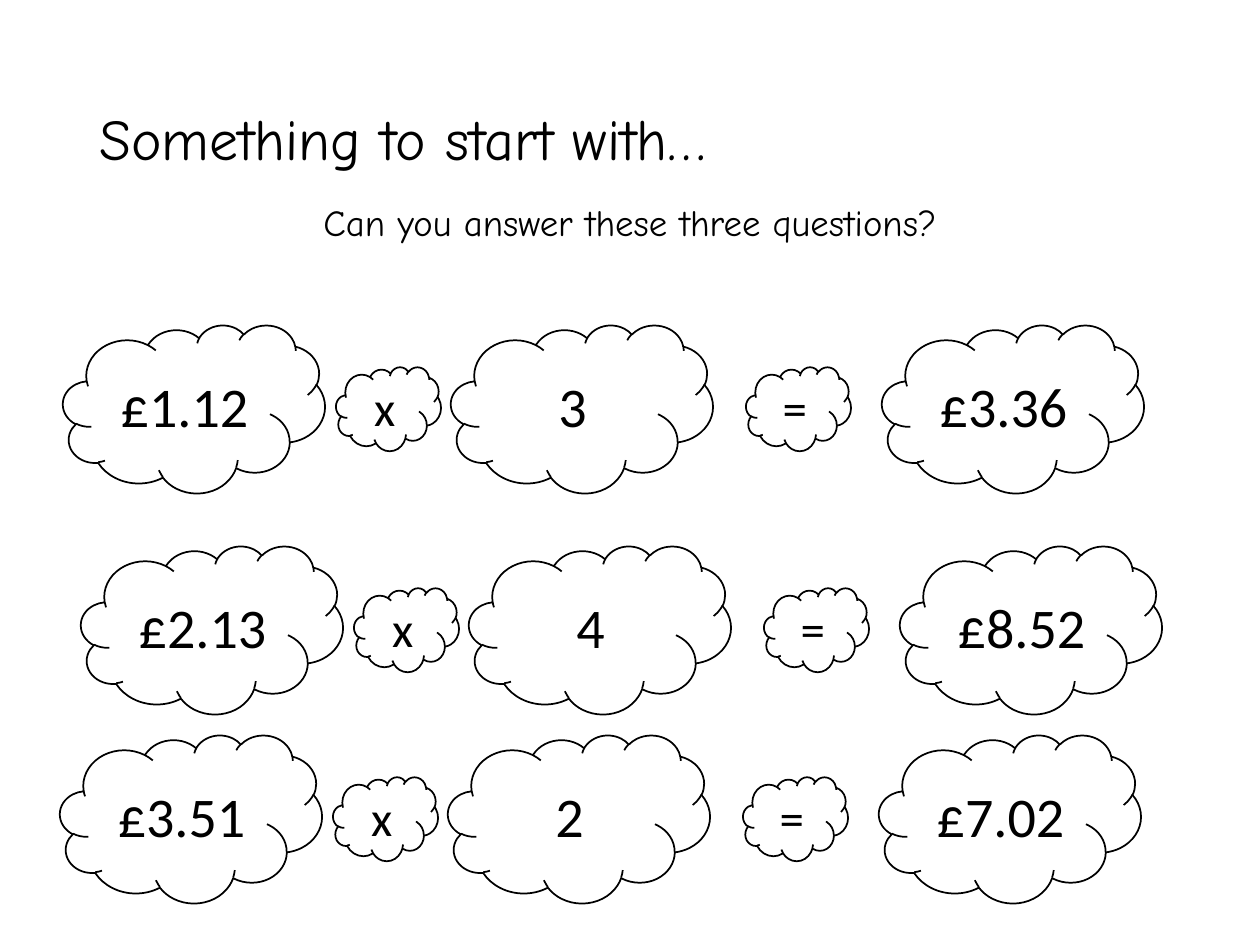
from pptx import Presentation
from pptx import util as u
from pptx.dml.color import RGBColor
from pptx.enum import shapes, text

PX = 914400 // 126
INK = {"text": "000000", "fill": "FFFFFF", "line": "000000"}
BIG, SMALL = (262, 168, 32), (105, 84, 28)  # width, height, font size
SLOTS = [(0, BIG), (273, SMALL), (388, BIG), (683, SMALL), (819, BIG)]
SUMS = [
    (63, 325, ["£1.12", "x", "3", "=", "£3.36"]),
    (81, 546, ["£2.13", "x", "4", "=", "£8.52"]),
    (60, 735, ["£3.51", "x", "2", "=", "£7.02"]),
]


def color(name):
    return RGBColor.from_string(INK[name])


def px(*nums):
    return [u.Emu(n * PX) for n in nums]


def write(shape, words, font, size, align, anchor):
    frame = shape.text_frame
    frame.word_wrap = True
    frame.vertical_anchor = anchor
    para = frame.paragraphs[0]
    para.text = words
    para.alignment = align
    para.font.name = font
    para.font.size = u.Pt(size)
    para.font.color.rgb = color("text")
    return para


def label(slide, box, words, size, align, anchor):
    shape = slide.shapes.add_textbox(*px(*box))
    para = write(shape, words, "Comic Neue", size, align, anchor)
    para.line_spacing = 0.9


def cloud(slide, box, words, size):
    shape = slide.shapes.add_shape(shapes.MSO_SHAPE.CLOUD, *px(*box))
    shape.shadow.inherit = False
    shape.fill.solid()
    shape.fill.fore_color.rgb = color("fill")
    shape.line.color.rgb = color("line")
    shape.line.width = u.Pt(1)
    write(shape, words, "Calibri", size,
          text.PP_ALIGN.CENTER, text.MSO_ANCHOR.MIDDLE)


def sum_row(slide, left, top, parts):
    """Draw one sum as clouds centred on a shared line."""
    for (shift, (wide, high, size)), words in zip(SLOTS, parts):
        drop = (BIG[1] - high) // 2
        cloud(slide, (left + shift, top + drop, wide, high), words, size)


def main():
    deck = Presentation()
    deck.slide_width, deck.slide_height = px(1260, 945)
    slide = deck.slides.add_slide(deck.slide_layouts[6])
    label(slide, (87, 50, 1086, 183), "Something to start with…", 33,
          text.PP_ALIGN.LEFT, text.MSO_ANCHOR.MIDDLE)
    label(slide, (63, 199, 1134, 95), "Can you answer these three questions?",
          21, text.PP_ALIGN.CENTER, text.MSO_ANCHOR.TOP)
    for left, top, parts in SUMS:
        sum_row(slide, left, top, parts)
    deck.save("out.pptx")


if __name__ == "__main__":
    main()
